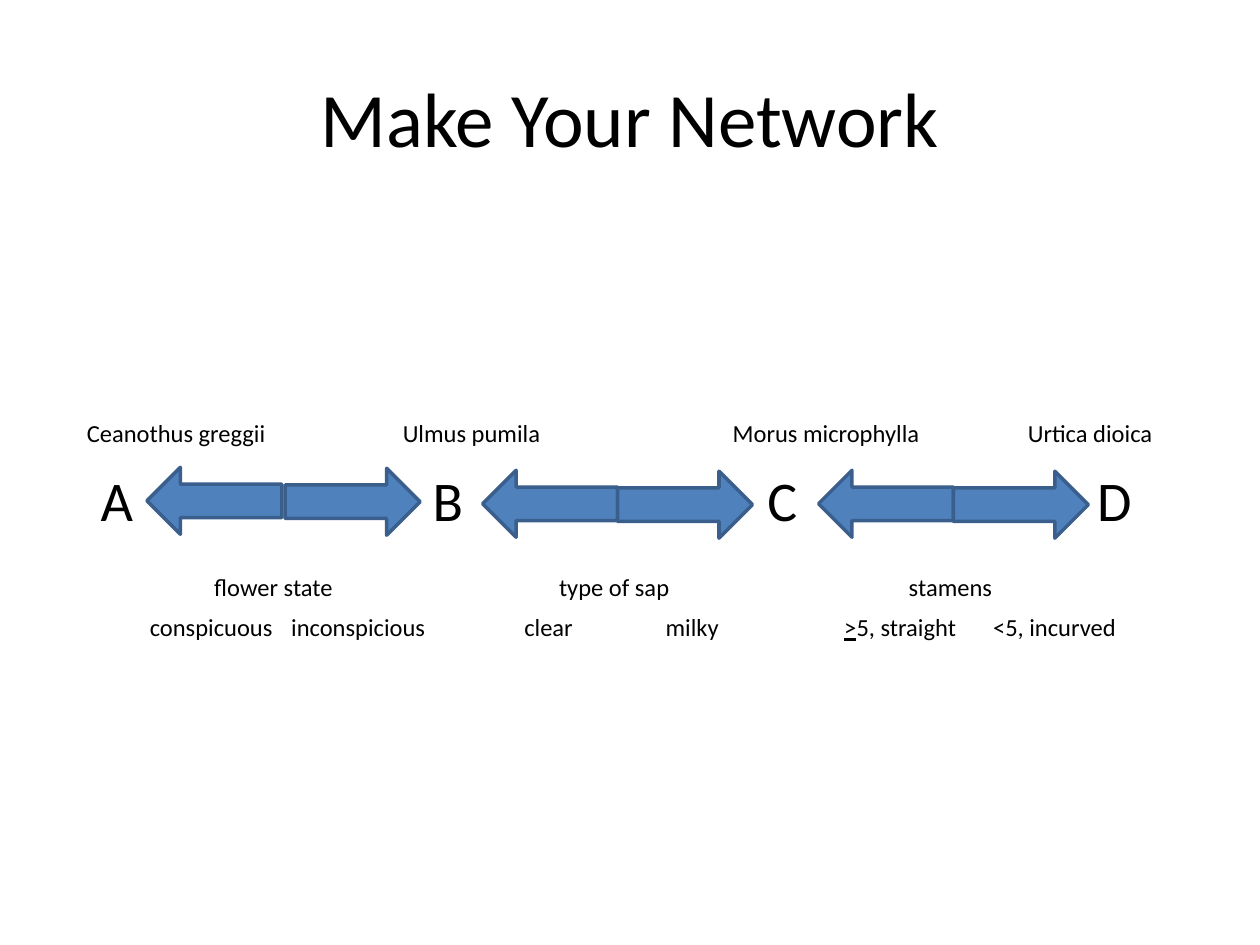
from pptx import Presentation
from pptx.dml.color import RGBColor
from pptx.enum.shapes import MSO_SHAPE as Shape
from pptx.enum.text import MSO_ANCHOR as Anchor, PP_ALIGN as Align
from pptx.oxml.xmlchemy import OxmlElement as Element
from pptx.util import Cm, Pt

COLORS = {"text": "000000", "arrow": "4F81BD", "outline": "3A5F8C"}


def color(name):
    return RGBColor.from_string(COLORS[name])


def style(para, size):
    for span in para.runs:
        span.font.name = "Calibri"
        span.font.size = Pt(size)
        span.font.color.rgb = color("text")


deck = Presentation()
deck.slide_width, deck.slide_height = Cm(25.4), Cm(19.05)
page = deck.slides.add_slide(deck.slide_layouts[6])

# Title
title = page.shapes.add_textbox(Cm(1.27), Cm(0.76), Cm(22.86), Cm(3.18))
title.text_frame.word_wrap = True
title.text_frame.vertical_anchor = Anchor.MIDDLE
title.text_frame.text = "Make Your Network"
heading = title.text_frame.paragraphs[0]
heading.alignment = Align.CENTER
style(heading, 44)

# Network text: size, space before, and (tab stop in cm, words) columns
ROWS = [
    (14, 0, [(0.23, "Ceanothus greggii"), (6.6, "Ulmus pumila"),
             (13.25, "Morus microphylla"), (19.2, "Urtica dioica")]),
    (32, 10.3, [(0.51, "A"), (7.2, "B"), (13.95, "C"), (20.6, "D")]),
    (14, 22.7, [(2.8, "flower state"), (9.75, "type of sap"), (16.8, "stamens")]),
    (14, 6.3, [(1.5, "conspicuous"), (4.35, "inconspicious"), (9.05, "clear"),
               (11.9, "milky"), (15.5, ">5, straight"), (18.5, "<5, incurved")]),
]
body = page.shapes.add_textbox(Cm(1.27), Cm(4.47), Cm(22.86), Cm(12.57))
frame = body.text_frame
frame.word_wrap = True
frame.margin_top = Cm(3.95)
for index, (size, before, columns) in enumerate(ROWS):
    para = frame.add_paragraph() if index else frame.paragraphs[0]
    para.space_before = Pt(before)
    tabs = Element("a:tabLst")
    for stop, words in columns:
        tab = Element("a:tab")
        tab.set("pos", str(Cm(stop)))
        tab.set("algn", "l")
        tabs.append(tab)
        para.add_run().text = "\t"
        if words.startswith(">"):  # underlined sign means "at least"
            sign = para.add_run()
            sign.text = ">"
            sign.font.underline = True
            words = words[1:]
        para.add_run().text = words
    para._p.get_or_add_pPr().append(tabs)
    style(para, size)

# Arrow pairs: left arrow x and y, right arrow x
ARROW_WIDTH, ARROW_HEIGHT = 2.72, 1.35
for left_x, top, right_x in [(2.96, 9.42, 5.75), (9.73, 9.48, 12.45), (16.5, 9.48, 19.22)]:
    for x, y, turn in [(left_x, top, 180), (right_x, top + 0.02, 0)]:
        arrow = page.shapes.add_shape(
            Shape.RIGHT_ARROW, Cm(x), Cm(y), Cm(ARROW_WIDTH), Cm(ARROW_HEIGHT))
        arrow.rotation = turn
        arrow.shadow.inherit = False
        arrow.fill.solid()
        arrow.fill.fore_color.rgb = color("arrow")
        arrow.line.color.rgb = color("outline")
        arrow.line.width = Pt(2)

deck.save("out.pptx")
